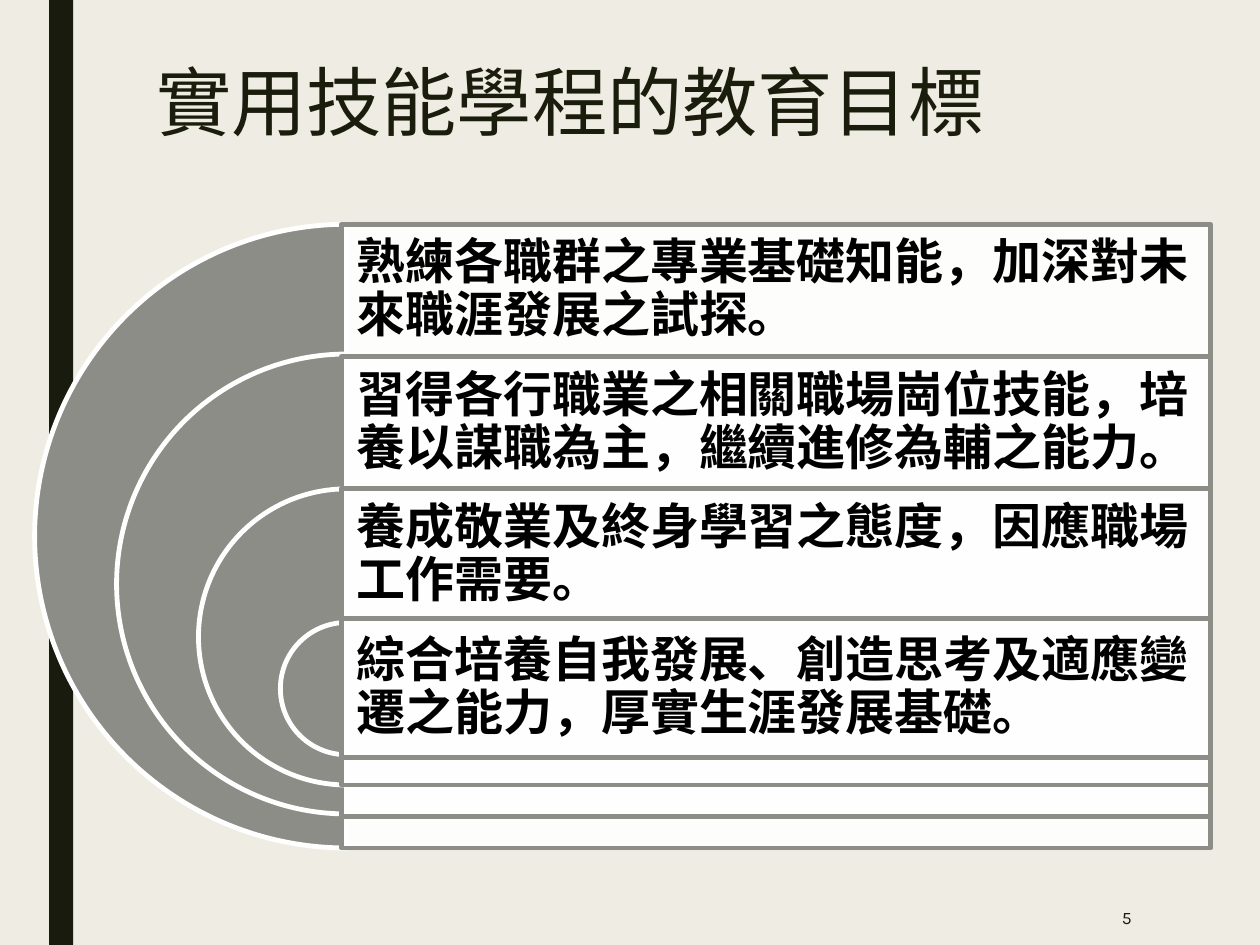
from dataclasses import dataclass

from lxml.etree import SubElement
from pptx import Presentation
from pptx.dml.color import RGBColor
from pptx.enum.shapes import MSO_SHAPE as Shape
from pptx.enum.text import MSO_ANCHOR as Anchor, MSO_AUTO_SIZE as AutoSize, PP_ALIGN as Align
from pptx.oxml.ns import qn
from pptx.util import Inches, Pt

COLORS = {
    "background": "EFEDE3",
    "bar": "191B0E",
    "title": "1A1D0C",
    "ring": "8C8D86",
    "white": "FFFFFF",
    "black": "000000",
}
CJK, LATIN = "Noto Sans CJK SC", "Karla"
PANEL_LEFT, PANEL_WIDTH = 2.71, 6.9


@dataclass
class Goal:
    text: str
    ring_top: float
    ring_size: float
    panel_top: float
    panel_height: float
    text_height: float = 1.05
    ending: str = ""


GOALS = [
    Goal("熟練各職群之專業基礎知能，加深對未來職涯發展之試探。", 1.78, 4.95, 1.78, 4.95),
    Goal("習得各行職業之相關職場崗位技能，培養以謀職為主，繼續進修為輔之能力。",
         2.81, 3.65, 2.83, 3.65),
    Goal("養成敬業及終身學習之態度，因應職場工作需要。", 3.88, 2.35, 3.88, 2.35),
    Goal("綜合培養自我發展、創造思考及適應變遷之能力，厚實生涯發展基礎",
         4.94, 1.05, 4.91, 1.1, 1.1, "。"),
]


def rgb(name: str) -> RGBColor:
    return RGBColor.from_string(COLORS[name])


def add_shape(s, kind, left: float, top: float, width: float, height: float,
              fill: str, line: str = ""):
    sp = s.shapes.add_shape(kind, Inches(left), Inches(top), Inches(width), Inches(height))
    sp.shadow.inherit = False
    sp.fill.solid()
    sp.fill.fore_color.rgb = rgb(fill)
    if line:
        sp.line.color.rgb = rgb(line)
        sp.line.width = Pt(2.75)
    else:
        sp.line.fill.background()
    return sp


def add_run(p, text: str, size: float, color: str, font: str = CJK, bold: bool = False):
    r = p.add_run()
    r.text = text
    r.font.size, r.font.bold, r.font.name = Pt(size), bold, font
    r.font.color.rgb = rgb(color)
    SubElement(r.font._element, qn("a:ea"), typeface=CJK)
    return r


def add_text_shadow(r) -> None:
    effects = r.font._element.makeelement(qn("a:effectLst"))
    shadow = SubElement(effects, qn("a:outerShdw"), dist="38100", dir="2700000")
    SubElement(shadow, qn("a:srgbClr"), val=COLORS["white"])
    r.font._element.find(qn("a:solidFill")).addnext(effects)


def add_text_box(s, left: float, top: float, width: float, height: float):
    tf = s.shapes.add_textbox(Inches(left), Inches(top), Inches(width), Inches(height)).text_frame
    tf.word_wrap = True
    tf.vertical_anchor = Anchor.MIDDLE
    return tf


def add_title(s, text: str) -> None:
    sp = s.shapes.title
    sp.left, sp.top, sp.width, sp.height = map(Inches, (1.14, 0.29, 8.27, 1.01))
    tf = sp.text_frame
    tf.auto_size = AutoSize.NONE
    tf.vertical_anchor = Anchor.MIDDLE
    p = tf.paragraphs[0]
    p.alignment = Align.LEFT
    add_text_shadow(add_run(p, text, 43, "title"))


def add_goal(s, goal: Goal) -> None:
    """Draw the half ring, its translucent panel and the goal's text."""
    ring_left = PANEL_LEFT + 0.04 - goal.ring_size / 2
    ring = add_shape(s, Shape.PIE, ring_left, goal.ring_top, goal.ring_size, goal.ring_size,
                     "ring", "white")
    ring.adjustments[0], ring.adjustments[1] = 54, 162  # 90 to 270 degrees

    panel = add_shape(s, Shape.RECTANGLE, PANEL_LEFT, goal.panel_top, PANEL_WIDTH,
                      goal.panel_height, "white", "ring")
    fill = panel.fill._xPr.find(qn("a:solidFill"))
    SubElement(fill[0], qn("a:alpha"), val="90000")

    tf = add_text_box(s, PANEL_LEFT, goal.panel_top, PANEL_WIDTH, goal.text_height)
    tf.margin_left = tf.margin_right = tf.margin_top = tf.margin_bottom = Inches(0.12)
    p = tf.paragraphs[0]
    p.line_spacing = 0.9
    add_run(p, goal.text, 28, "black", bold=True)
    if goal.ending:
        add_run(p, goal.ending, 28, "black", LATIN, True)


def main() -> None:
    prs = Presentation()
    prs.slide_width, prs.slide_height = Inches(10), Inches(7.5)
    s = prs.slides.add_slide(prs.slide_layouts[5])
    s.background.fill.solid()
    s.background.fill.fore_color.rgb = rgb("background")

    add_shape(s, Shape.RECTANGLE, 0.39, 0, 0.19, 7.5, "bar")
    add_title(s, "實用技能學程的教育目標")
    for goal in GOALS:
        add_goal(s, goal)

    p = add_text_box(s, 7.77, 7.06, 1.31, 0.44).paragraphs[0]
    p.alignment = Align.RIGHT
    add_run(p, "5", 10, "bar", LATIN)
    prs.save("out.pptx")


if __name__ == "__main__":
    main()
